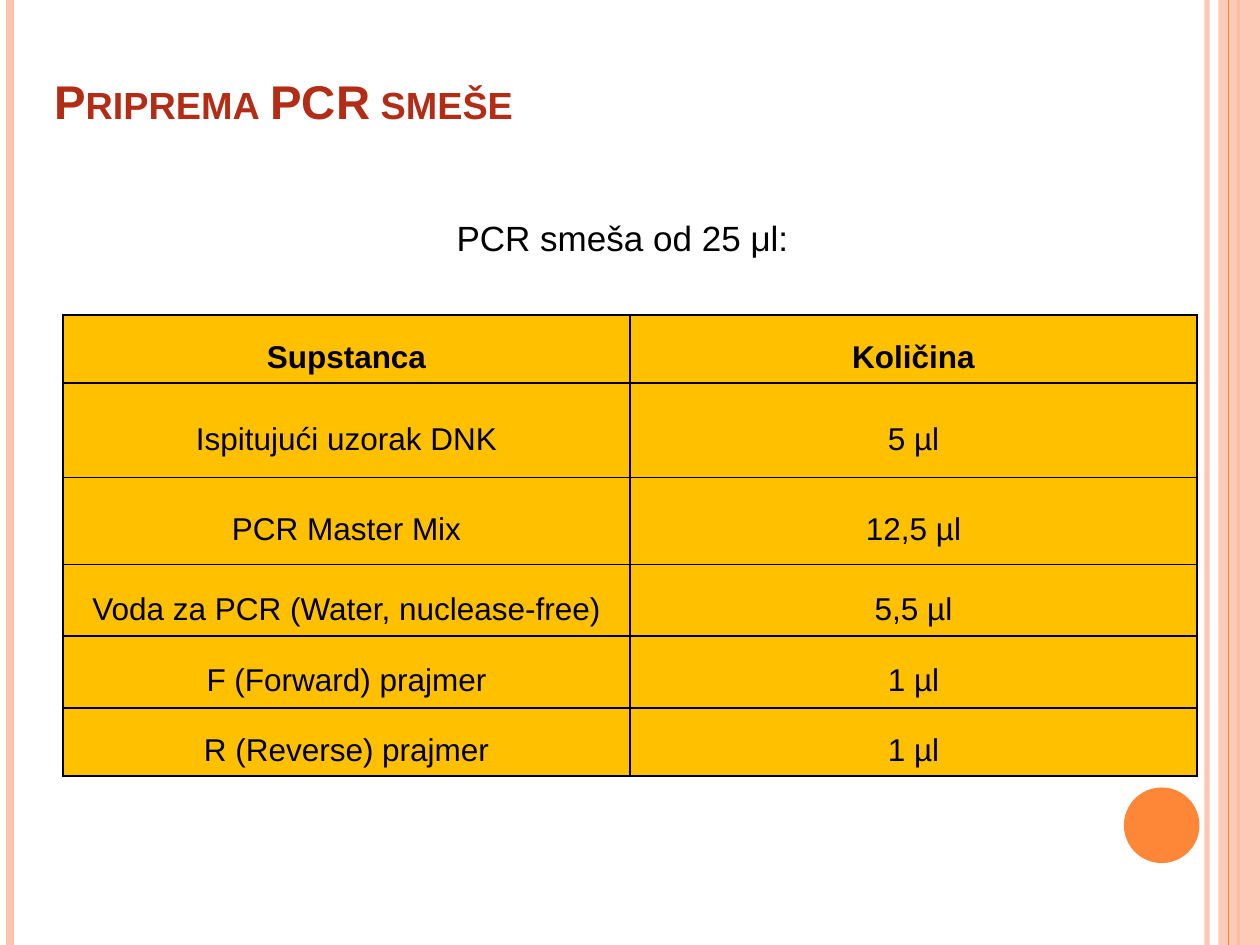
from dataclasses import dataclass
from typing import NamedTuple

from pptx import Presentation
from pptx.dml.color import RGBColor
from pptx.enum.shapes import MSO_CONNECTOR, MSO_SHAPE
from pptx.enum.text import MSO_ANCHOR, MSO_AUTO_SIZE, PP_ALIGN
from pptx.oxml.ns import qn
from pptx.util import Inches, Pt
from lxml import etree

STRAIGHT = MSO_CONNECTOR.STRAIGHT
RECTANGLE, OVAL = MSO_SHAPE.RECTANGLE, MSO_SHAPE.OVAL
CENTER = PP_ALIGN.CENTER
MIDDLE, BOTTOM = MSO_ANCHOR.MIDDLE, MSO_ANCHOR.BOTTOM
NO_AUTOFIT = MSO_AUTO_SIZE.NONE
SLIDE_WIDTH, SLIDE_HEIGHT = 10, 7.5


@dataclass(frozen=True)
class Theme:
    font: str = "Arial"
    title: str = "B32C16"
    text: str = "000000"
    accent: str = "FE8637"
    pale: str = "FEC3AE"
    cell: str = "FFC000"
    title_size: float = 27
    body_size: float = 20
    table_size: float = 18
    border: float = 1


class Box(NamedTuple):
    left: float
    top: float
    width: float
    height: float

    def emu(self) -> list:
        return [Inches(length) for length in self]


class Stripe(NamedTuple):
    x: float
    color: str
    weight: float
    opacity: int = 100


class Ingredient(NamedTuple):
    name: str
    amount: str


THEME = Theme()
STRIPES_BELOW = [
    Stripe(9.58, THEME.pale, 3, 93),
    Stripe(0.08, THEME.pale, 4.5),
    Stripe(9.83, THEME.accent, 1.5),
]
STRIPE_ABOVE = Stripe(9.75, THEME.accent, 0.75)
BAND = Box(9.67, 0, 0.33, SLIDE_HEIGHT)
DISC = Box(8.92, 6.25, 0.6, 0.6)
TITLE = Box(0.33, 0.67, 9.33, 0.83)
BODY = Box(0.33, 1.67, 9.3, 5)
TABLE = Box(0.5, 2.5, 9, 3.67)
ROW_HEIGHTS = [0.54, 0.75, 0.69, 0.57, 0.57, 0.54]
MIXTURE = [
    Ingredient("Supstanca", "Količina"),
    Ingredient("Ispitujući uzorak DNK", "5 µl"),
    Ingredient("PCR Master Mix", "12,5 µl"),
    Ingredient("Voda za PCR (Water, nuclease-free)", "5,5 µl"),
    Ingredient("F (Forward) prajmer", "1 µl"),
    Ingredient("R (Reverse) prajmer", "1 µl"),
]


def set_opacity(properties, percent: int) -> None:
    if percent < 100:
        color = next(properties.iter(qn("a:srgbClr")))
        etree.SubElement(color, qn("a:alpha"), val=str(percent * 1000))


def draw_stripe(slide, stripe: Stripe) -> None:
    x = Inches(stripe.x)
    connector = slide.shapes.add_connector(STRAIGHT, x, 0, x, Inches(SLIDE_HEIGHT))
    connector.line.color.rgb = RGBColor.from_string(stripe.color)
    connector.line.width = Pt(stripe.weight)
    properties = connector._element.spPr
    set_opacity(properties, stripe.opacity)
    etree.SubElement(properties, qn("a:effectLst"))


def draw_shape(slide, kind, box: Box, color: str, opacity: int = 100) -> None:
    shape = slide.shapes.add_shape(kind, *box.emu())
    shape.shadow.inherit = False
    shape.fill.solid()
    shape.fill.fore_color.rgb = RGBColor.from_string(color)
    shape.line.fill.background()
    set_opacity(shape._element.spPr, opacity)


def add_run(paragraph, text: str, size: float, color: str, bold: bool = False):
    run = paragraph.add_run()
    run.text = text
    run.font.name = THEME.font
    run.font.size = Pt(size)
    run.font.bold = bold
    run.font.color.rgb = RGBColor.from_string(color)
    return run


def write_title(slide, text: str) -> None:
    title = slide.shapes.title
    title.left, title.top, title.width, title.height = TITLE.emu()
    frame = title.text_frame
    frame.auto_size = NO_AUTOFIT
    frame.vertical_anchor = BOTTOM
    frame.margin_bottom = Inches(0.48)
    paragraph = frame.paragraphs[0]
    paragraph.alignment = PP_ALIGN.LEFT
    run = add_run(paragraph, text, THEME.title_size, THEME.title, bold=True)
    run.font._element.set("cap", "small")


def write_body(slide, text: str) -> None:
    frame = slide.shapes.add_textbox(*BODY.emu()).text_frame
    frame.word_wrap = True
    paragraph = frame.paragraphs[0]
    paragraph.alignment = CENTER
    paragraph.space_before = Pt(6)
    add_run(paragraph, text, THEME.body_size, THEME.text)


def draw_borders(cell) -> None:
    properties = cell._tc.get_or_add_tcPr()
    for index, side in enumerate(("lnL", "lnR", "lnT", "lnB")):
        line = etree.Element(qn(f"a:{side}"), w=str(Pt(THEME.border)))
        fill = etree.SubElement(line, qn("a:solidFill"))
        etree.SubElement(fill, qn("a:srgbClr"), val=THEME.text)
        properties.insert(index, line)


def fill_cell(cell, text: str, bold: bool) -> None:
    cell.fill.solid()
    cell.fill.fore_color.rgb = RGBColor.from_string(THEME.cell)
    cell.vertical_anchor = MIDDLE
    cell.margin_left = cell.margin_right = Inches(0.07)
    cell.margin_top = cell.margin_bottom = 0
    paragraph = cell.text_frame.paragraphs[0]
    paragraph.alignment = CENTER
    paragraph.line_spacing = 1.5
    add_run(paragraph, text, THEME.table_size, THEME.text, bold)
    draw_borders(cell)


def draw_table(slide, mixture: list[Ingredient]) -> None:
    columns = len(Ingredient._fields)
    table = slide.shapes.add_table(len(mixture), columns, *TABLE.emu()).table
    table.horz_banding = False
    for row, height, ingredient in zip(table.rows, ROW_HEIGHTS, mixture):
        row.height = Inches(height)
        for cell, text in zip(row.cells, ingredient):
            fill_cell(cell, text, bold=ingredient is mixture[0])


def main() -> None:
    presentation = Presentation()
    presentation.slide_width = Inches(SLIDE_WIDTH)
    presentation.slide_height = Inches(SLIDE_HEIGHT)
    slide = presentation.slides.add_slide(presentation.slide_layouts[5])

    # Side decoration
    for stripe in STRIPES_BELOW:
        draw_stripe(slide, stripe)
    draw_shape(slide, RECTANGLE, BAND, THEME.pale, opacity=87)
    draw_stripe(slide, STRIPE_ABOVE)
    draw_shape(slide, OVAL, DISC, THEME.accent)

    # Content
    write_title(slide, "Priprema PCR smeše")
    write_body(slide, "PCR smeša od 25 μl: ")
    draw_table(slide, MIXTURE)
    presentation.save("out.pptx")


if __name__ == "__main__":
    main()
